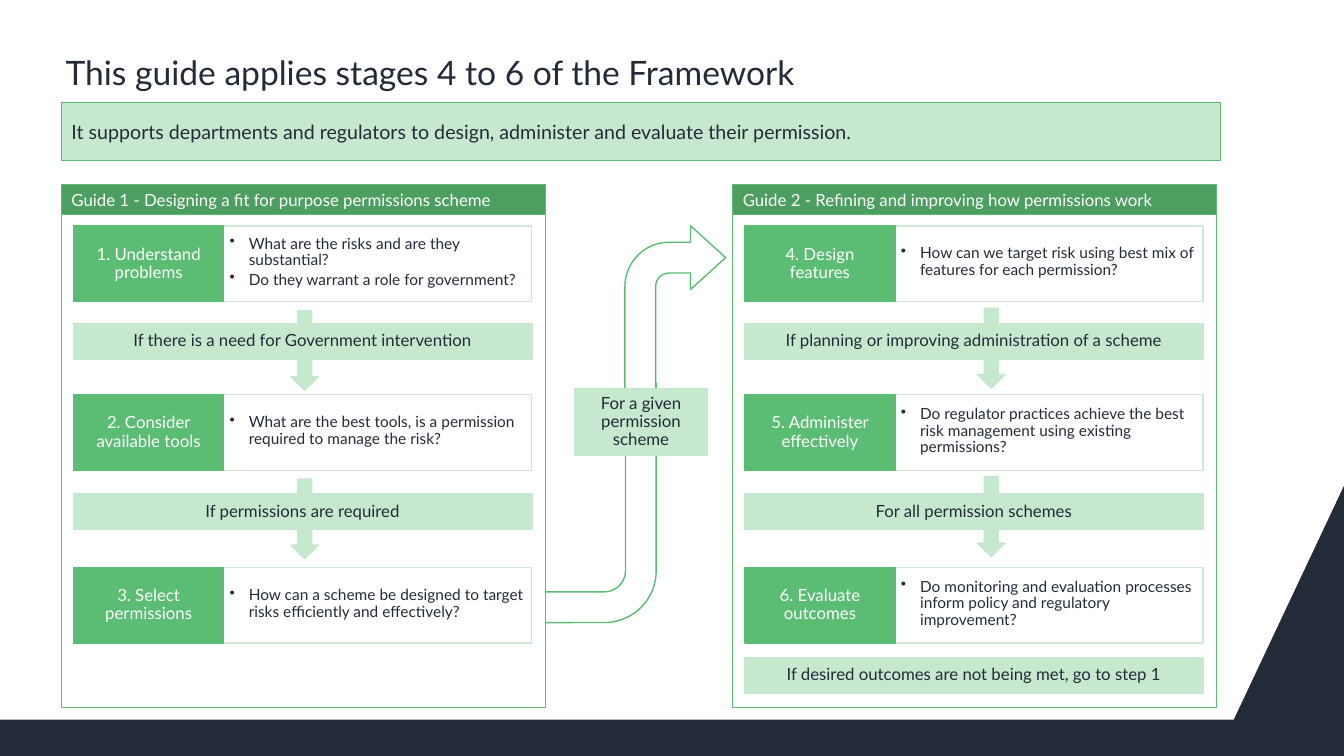
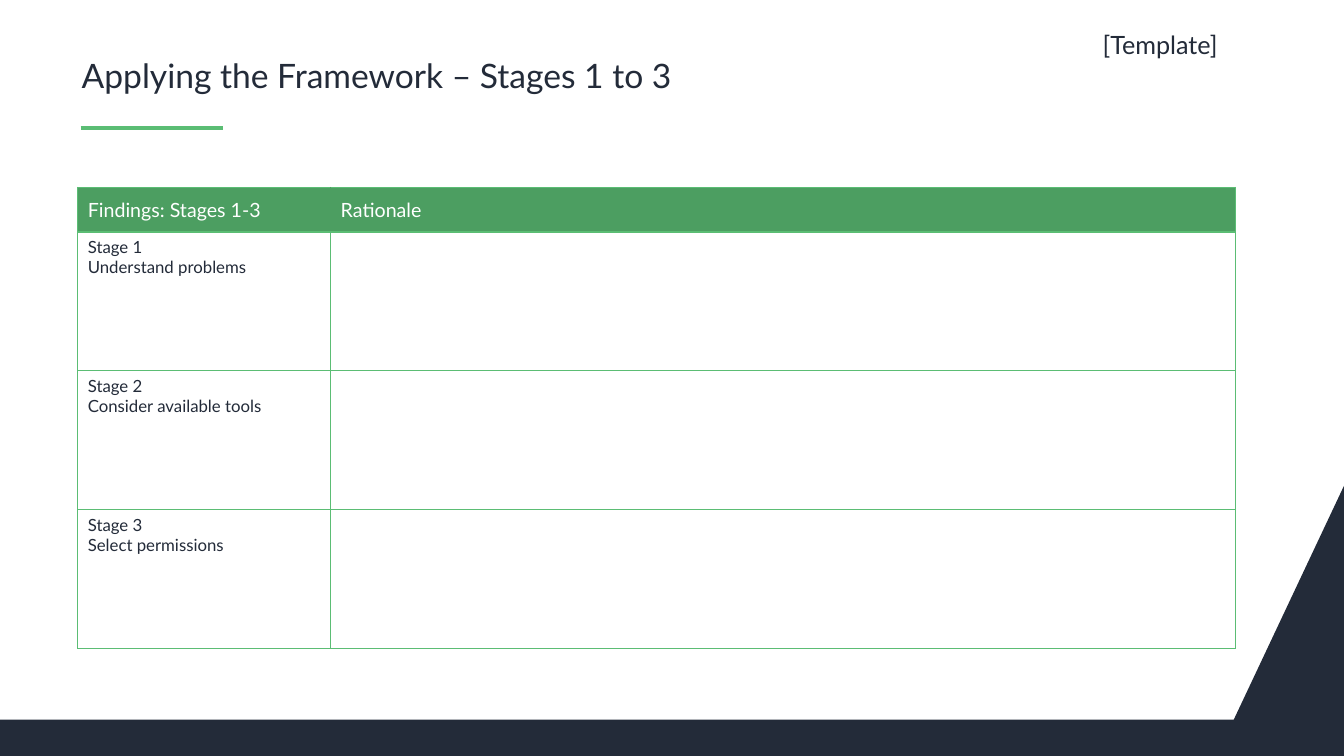
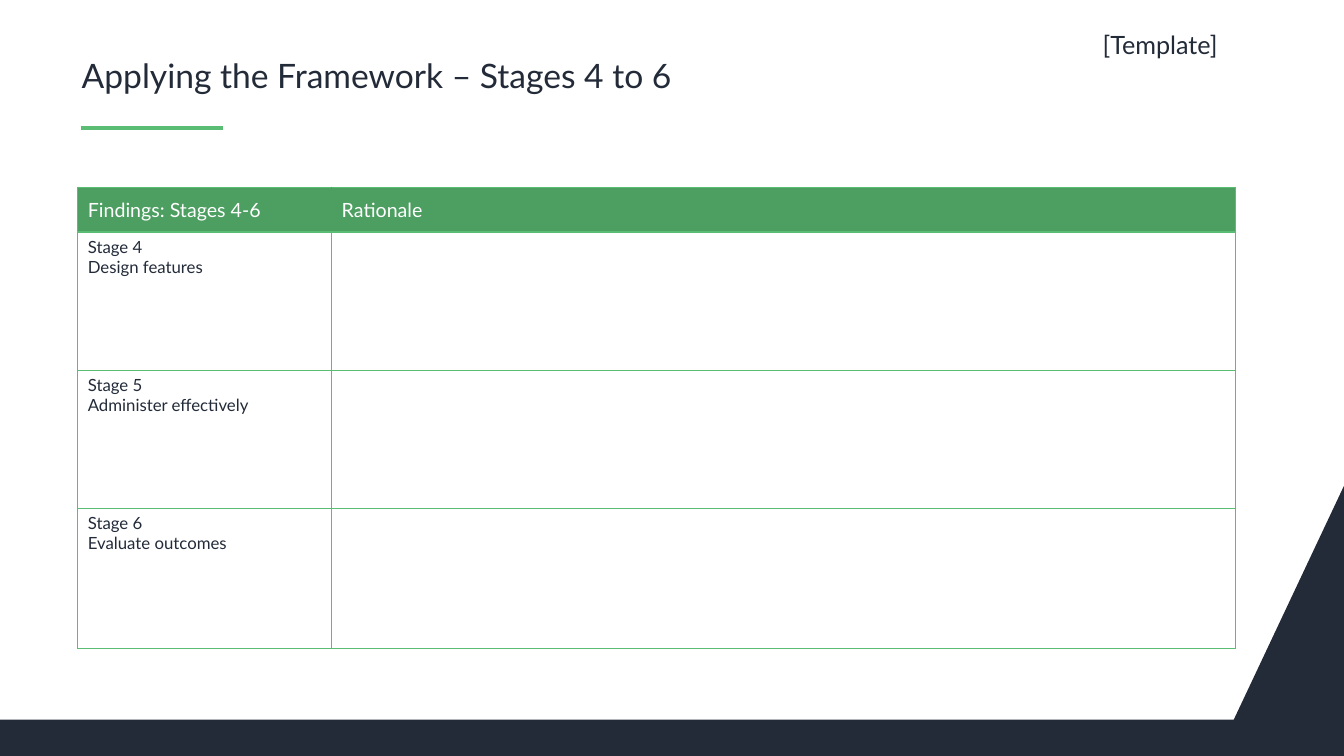
"""Build three slides about a framework for designing and refining permissions."""
from lxml.etree import SubElement
from pptx import Presentation
from pptx.dml.color import RGBColor
from pptx.enum.shapes import MSO_CONNECTOR, MSO_SHAPE as Preset
from pptx.enum.text import MSO_ANCHOR as Anchor, PP_ALIGN as Align
from pptx.oxml.ns import qn
from pptx.util import Pt

COLOURS = {"ink": "232B39", "white": "FFFFFF", "mint": "C6E8CE",
           "green": "5BBD74", "forest": "4C9E61", "pale": "D2E8D6"}

STAGES = [
    ("Understand problems", ["What are the risks and are they substantial?",
                             "Do they warrant a role for government?"]),
    ("Consider available tools",
     ["What are the best tools, is a permission required to manage the risk?"]),
    ("Select permissions",
     ["How can a scheme be designed to target risks efficiently and effectively?"]),
    ("Design features",
     ["How can we target risk using best mix of features for each permission?"]),
    ("Administer effectively",
     ["Do regulator practices achieve the best risk management using existing permissions?"]),
    ("Evaluate outcomes",
     ["Do monitoring and evaluation processes inform policy and regulatory improvement?"]),
]

GUIDES = [
    {"left": 44, "heading": "Guide 1 - Designing a fit for purpose permissions scheme",
     "first": 1, "arrow": (208, 221.8),
     "conditions": ["If there is a need for Government intervention",
                    "If permissions are required"]},
    {"left": 523.5, "heading": "Guide 2 - Refining and improving how permissions work",
     "first": 4, "arrow": (698.4, 220.3),
     "conditions": ["If planning or improving administration of a scheme",
                    "For all permission schemes",
                    "If desired outcomes are not being met, go to step 1"]},
]


class Deck:
    """Hold the shared style and the current slide."""

    font = "Lato"

    def __init__(self):
        self.show = Presentation()
        self.show.slide_width, self.show.slide_height = Pt(960), Pt(540)
        self.shapes = None

    def colour(self, name):
        return RGBColor.from_string(COLOURS[name])

    def paint(self, shape, fill, line=None, width=1):
        shape.shadow.inherit = False
        shape.fill.solid()
        shape.fill.fore_color.rgb = self.colour(fill)
        if line:
            shape.line.color.rgb = self.colour(line)
            shape.line.width = Pt(width)
        else:
            shape.line.fill.background()

    def new_slide(self):
        self.shapes = self.show.slides.add_slide(self.show.slide_layouts[6]).shapes
        outline = [(0, 514), (0, 540), (960, 540), (960, 347)]
        builder = self.shapes.build_freeform(Pt(881.3), Pt(514))
        builder.add_line_segments([(Pt(x), Pt(y)) for x, y in outline])
        self.paint(builder.convert_to_shape(), "ink")

    def fill_text(self, frame, lines, size, colour="ink", align=Align.LEFT,
                  spacing=1, after=0, bullets=False):
        for index, line in enumerate(lines):
            paragraph = frame.add_paragraph() if index else frame.paragraphs[0]
            layout = {"alignment": align, "line_spacing": spacing, "space_after": Pt(after)}
            for name, value in layout.items():
                setattr(paragraph, name, value)
            run = paragraph.add_run()
            run.text = line
            for name, value in {"name": self.font, "size": Pt(size)}.items():
                setattr(run.font, name, value)
            run.font.color.rgb = self.colour(colour)
            if bullets:
                properties = paragraph._p.get_or_add_pPr()
                properties.set("marL", str(Pt(13.7)))
                properties.set("indent", str(-Pt(13.7)))
                SubElement(properties, qn("a:buChar"), char="•")

    def frame(self, shape, anchor=Anchor.MIDDLE, insets=(7.2, 3.6, 7.2, 3.6)):
        frame = shape.text_frame
        sides = ("margin_left", "margin_top", "margin_right", "margin_bottom")
        settings = {"word_wrap": True, "vertical_anchor": anchor,
                    **{side: Pt(inset) for side, inset in zip(sides, insets)}}
        for name, value in settings.items():
            setattr(frame, name, value)
        return frame

    def text(self, area, line, size, anchor=Anchor.TOP, insets=(7.2, 3.6, 7.2, 3.6), spacing=1):
        box = self.shapes.add_textbox(*map(Pt, area))
        self.fill_text(self.frame(box, anchor, insets), [line], size, spacing=spacing)

    def title(self, area, line, anchor):
        self.text(area, line, 24, anchor, (2.9, 3.6, 2.9, 3.6), 0.9)

    def shape(self, preset, area, fill, line=None, width=1, adjust=(), turn=0):
        shape = self.shapes.add_shape(preset, *map(Pt, area))
        self.paint(shape, fill, line, width)
        for index, value in enumerate(adjust):
            shape.adjustments[index] = value
        shape.rotation = turn
        return shape

    def banner(self, area, line, size, fill, colour):
        banner = self.shape(Preset.RECTANGLE, area, fill, "green", 0.75)
        self.fill_text(self.frame(banner), [line], size, colour)

    def label(self, area, line, fill="mint", colour="ink"):
        label = self.shape(Preset.RECTANGLE, area, fill, fill)
        self.fill_text(self.frame(label, insets=(7.2, 4.3, 7.2, 4.3)), [line], 12, colour,
                       Align.CENTER, 0.9)

    def stage(self, left, top, number):
        name, questions = STAGES[number - 1]
        detail = self.shape(Preset.RECTANGLE, (left + 107, top, 220, 54), "white", "pale")
        self.fill_text(self.frame(detail, insets=(4.3, 4.3, 4.3, 6.5)), questions, 11,
                       spacing=0.9, after=2, bullets=True)
        self.label((left, top, 107, 54), f"{number}. {name}", "green", "white")

    def guide(self, left, heading, first, arrow, conditions):
        self.shape(Preset.RECTANGLE, (left, 150.5, 345.6, 355), "white", "green", 0.75)
        self.banner((left, 131.8, 345.6, 21.6), heading, 12, "forest", "white")
        for index, top in enumerate((161.3, 282, 405.4)):
            self.stage(left + 8.7, top, first + index)
        x, y = arrow
        for step in range(2):
            self.shape(Preset.DOWN_ARROW, (x, y + step * 120.3, 19.4, 57), "mint", "mint",
                       adjust=(0.51, 0.5))
        for top, condition in zip((231, 352.8, 469.6), conditions):
            self.label((left + 8.3, top, 327.6, 25.4), condition)

    def rule(self, left, right, y):
        rule = self.shapes.add_connector(MSO_CONNECTOR.STRAIGHT, Pt(left), Pt(y), Pt(right), Pt(y))
        rule.line.color.rgb = self.colour("green")
        rule.line.width = Pt(3)
        SubElement(rule._element.spPr, qn("a:effectLst"))

    def border(self, cell, side, colour, width):
        line = SubElement(cell._tc.get_or_add_tcPr(), qn(f"a:ln{side}"), w=str(Pt(width)))
        SubElement(SubElement(line, qn("a:solidFill")), qn("a:srgbClr"), val=COLOURS[colour])

    def findings(self, area, columns, heights, rows):
        table = self.shapes.add_table(len(rows), len(columns), *map(Pt, area)).table
        table.first_row = table.horz_banding = False
        for column, width in zip(table.columns, columns):
            column.width = Pt(width)
        for r, (row, height, entries) in enumerate(zip(table.rows, heights, rows)):
            row.height = Pt(height)
            header = r == 0
            for c, (cell, lines) in enumerate(zip(row.cells, entries)):
                outer = {"L": c == 0, "R": c == len(columns) - 1,
                         "T": r < 2, "B": header or r == len(rows) - 1}
                for side, edge in outer.items():
                    colour = "forest" if header and not edge else "green"
                    self.border(cell, side, colour, 1 if edge else 0.75)
                cell.fill.solid()
                cell.fill.fore_color.rgb = self.colour("forest" if header else "white")
                cell.vertical_anchor = Anchor.MIDDLE if header else Anchor.TOP
                self.fill_text(cell.text_frame, lines, 14 if header else 12,
                               "white" if header else "ink")

    def template(self, first, columns, heights):
        last = first + 2
        self.new_slide()
        self.rule(57.6, 159.1, 91.4)
        self.title((55.5, 35.3, 828, 36.7),
                   f"Applying the Framework – Stages {first} to {last}", Anchor.BOTTOM)
        rows = [([f"Findings: Stages {first}-{last}"], ["Rationale"])]
        rows += [([f"Stage {number}", STAGES[number - 1][0]], [])
                 for number in range(first, last + 1)]
        self.findings((55.5, 134, sum(columns), sum(heights)), columns, heights, rows)
        self.text((780.5, 17.3, 138, 29), "[Template]", 18)


def main():
    deck = Deck()
    deck.new_slide()
    deck.title((44, 24.5, 828, 57), "This guide applies stages 4 to 6 of the Framework",
               Anchor.MIDDLE)
    deck.banner((44, 73.6, 828, 41), "It supports departments and regulators to design, "
                "administer and evaluate their permission.", 14, "mint", "ink")
    deck.shape(Preset.BENT_ARROW, (319.7, 273.6, 149, 186.5), "white", "green",
               adjust=(0.147, 0.177, 0.393, 0.248), turn=180)
    for guide in GUIDES:
        deck.guide(**guide)
    deck.shape(Preset.BENT_ARROW, (446.4, 161.3, 72, 125.3), "white", "green",
               adjust=(0.305, 0.316, 0.349, 0.438))
    deck.label((410.4, 277.7, 95, 47.3), "For a given permission scheme")
    deck.template(1, (180.7, 646.6), (31.7, 99.2, 99.2, 99.2))
    deck.template(4, (181.4, 645.9), (31.7, 98.6, 98.6, 100.1))
    deck.show.save("out.pptx")


if __name__ == "__main__":
    main()
